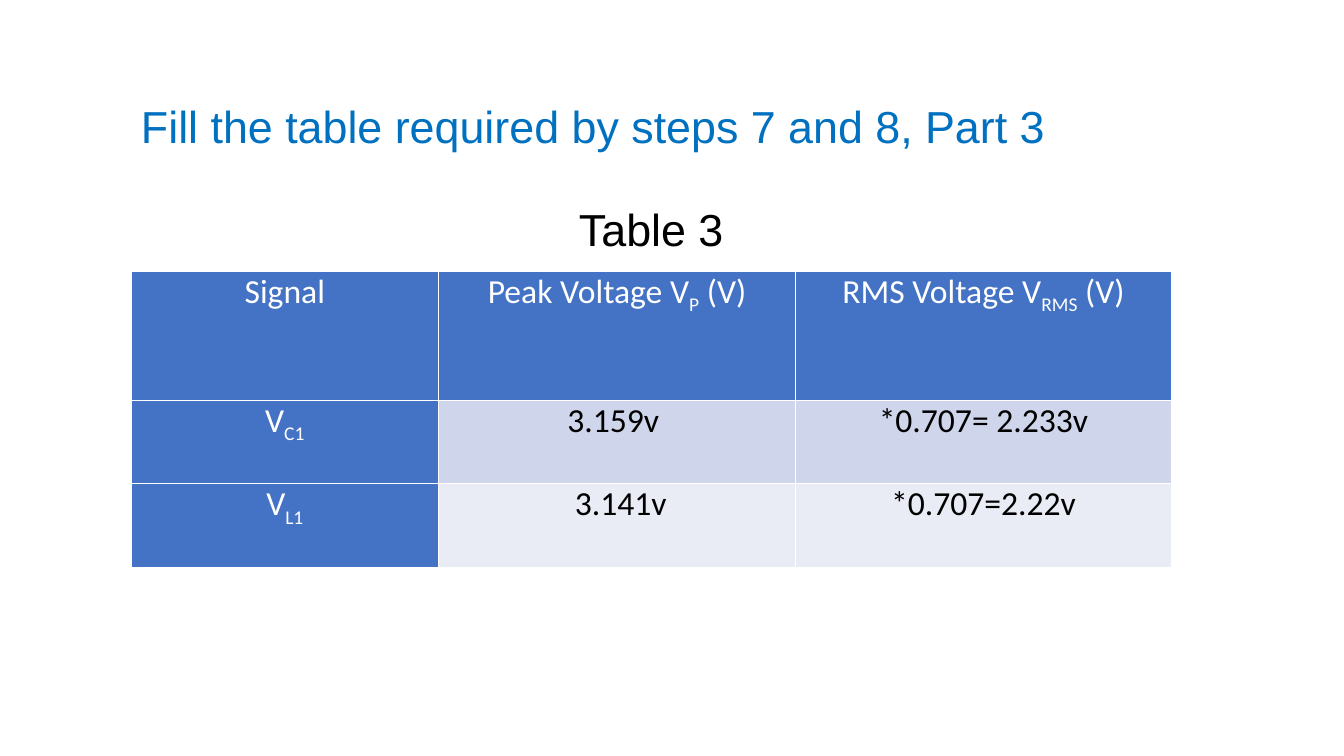
from dataclasses import dataclass

from lxml import etree
from pptx import Presentation
from pptx.dml.color import RGBColor
from pptx.enum.text import MSO_ANCHOR, PP_ALIGN
from pptx.oxml.ns import qn
from pptx.util import Inches, Pt

LEFT, CENTER = PP_ALIGN.LEFT, PP_ALIGN.CENTER
MIDDLE = MSO_ANCHOR.MIDDLE


@dataclass(frozen=True)
class Theme:
    """Colours, fonts and type sizes of the slide."""
    title: str = "0070C0"
    ink: str = "000000"
    white: str = "FFFFFF"
    header: str = "4472C4"
    bands: tuple = ("CFD5EA", "E9EBF5")
    heading_font: str = "Arial"
    table_font: str = "Calibri"
    heading_size: int = 32
    table_size: int = 24
    subscript: int = -25000
    border: float = 1


THEME = Theme()
COLUMN_WIDTHS = (3.05, 3.54, 3.73)
ROW_HEIGHTS = (1.28, 0.83, 0.83)
VOLTAGES = (
    (("Signal",), ("Peak Voltage V", "P", " (V)"), ("RMS Voltage V", "RMS", " (V)")),
    (("V", "C1"), ("3.159v ",), ("*0.707= 2.233v",)),
    (("V", "L1"), (" 3.141v",), ("*0.707=2.22v",)),
)


def write_text(frame, pieces, *, font, size, color, align=LEFT, spacing=1.0):
    """Write one paragraph in which every second piece is a subscript."""
    para = frame.paragraphs[0]
    para.alignment = align
    para.line_spacing = spacing
    for index, piece in enumerate(pieces):
        span = para.add_run()
        span.text = piece
        span.font.name = font
        span.font.size = Pt(size)
        span.font.color.rgb = RGBColor.from_string(color)
        if index % 2:
            span._r.get_or_add_rPr().set("baseline", str(THEME.subscript))


def add_heading(page, box, text, **style):
    """Place a vertically centred line of heading text in the box."""
    frame = page.shapes.add_textbox(*map(Inches, box)).text_frame
    frame.word_wrap = True
    frame.vertical_anchor = MIDDLE
    write_text(frame, (text,), font=THEME.heading_font, size=THEME.heading_size, **style)


def add_borders(cell):
    """Draw a thin white line on all four sides of a cell."""
    properties = cell._tc.get_or_add_tcPr()
    for position, side in enumerate(("lnL", "lnR", "lnT", "lnB")):
        line = etree.Element(qn(f"a:{side}"), w=str(Pt(THEME.border)))
        fill = etree.SubElement(line, qn("a:solidFill"))
        etree.SubElement(fill, qn("a:srgbClr"), val=THEME.white)
        properties.insert(position, line)


def fill_cell(cell, pieces, fill, color):
    """Give a cell its margins, fill, borders and text."""
    cell.margin_left = cell.margin_right = Inches(0.07)
    cell.margin_top = cell.margin_bottom = 0
    cell.fill.solid()
    cell.fill.fore_color.rgb = RGBColor.from_string(fill)
    add_borders(cell)
    write_text(cell.text_frame, pieces, font=THEME.table_font,
               size=THEME.table_size, color=color, align=CENTER)


def add_voltage_table(page, left, top):
    """Place the table of voltages with its top left corner at the point."""
    box = (left, top, sum(COLUMN_WIDTHS), sum(ROW_HEIGHTS))
    table = page.shapes.add_table(
        len(ROW_HEIGHTS), len(COLUMN_WIDTHS), *map(Inches, box)).table
    table.first_col = True
    for column, width in zip(table.columns, COLUMN_WIDTHS):
        column.width = Inches(width)
    for row, (height, entries) in enumerate(zip(ROW_HEIGHTS, VOLTAGES)):
        table.rows[row].height = Inches(height)
        for column, pieces in enumerate(entries):
            is_header = row == 0 or column == 0
            fill = THEME.header if is_header else THEME.bands[(row - 1) % 2]
            color = THEME.white if is_header else THEME.ink
            fill_cell(table.cell(row, column), pieces, fill, color)


def main():
    """Build the slide and save it."""
    deck = Presentation()
    deck.slide_width, deck.slide_height = Inches(13.33), Inches(7.5)
    page = deck.slides.add_slide(deck.slide_layouts[6])
    add_heading(page, (1.3, 0.7, 11.12, 1.15),
                "Fill the table required by steps 7 and 8, Part 3",
                color=THEME.title, spacing=0.9)
    add_voltage_table(page, 1.3, 2.69)
    add_heading(page, (5.36, 1.95, 2.2, 0.64), "Table 3",
                color=THEME.ink, align=CENTER)
    deck.save("out.pptx")


if __name__ == "__main__":
    main()
